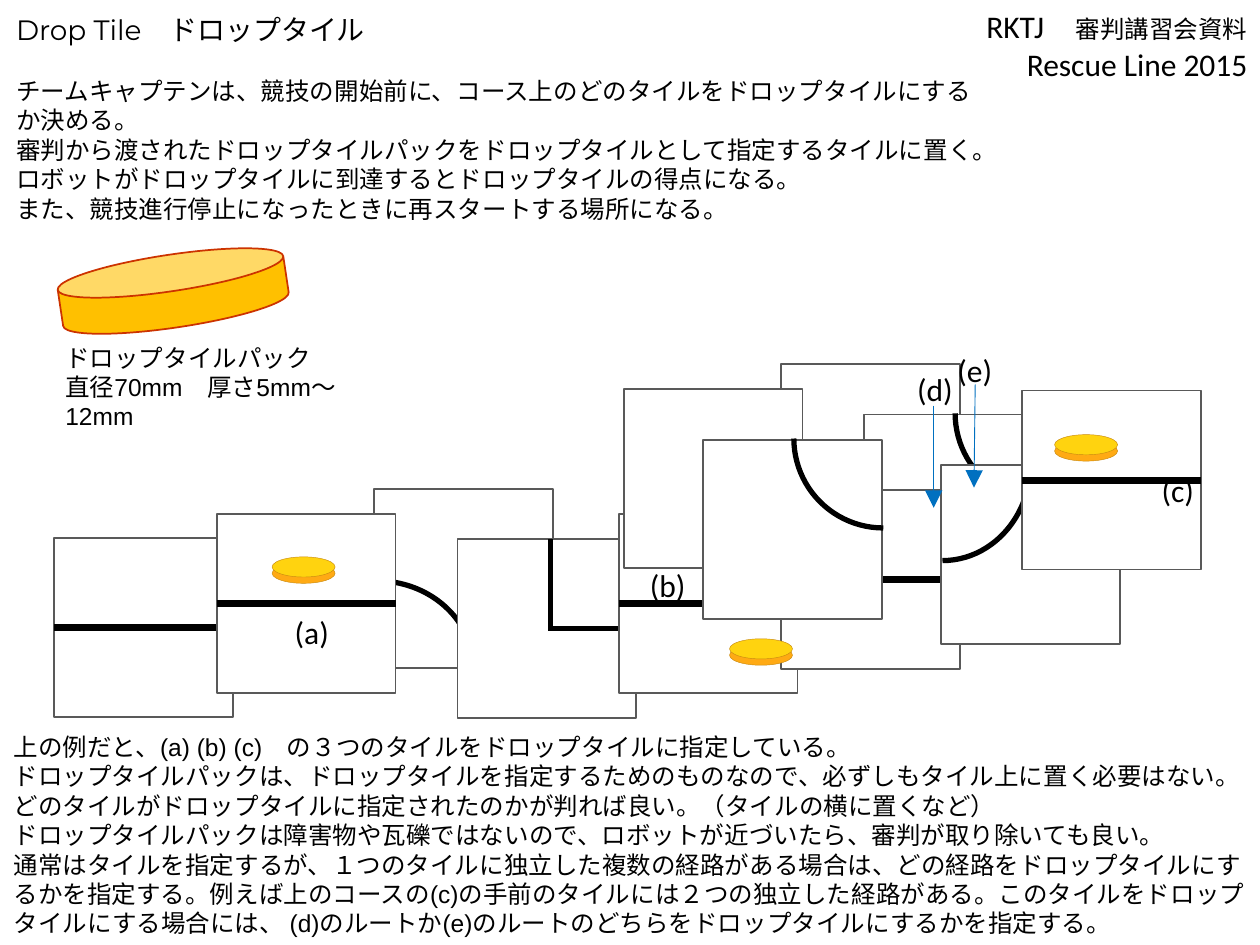
from lxml import etree
from pptx import Presentation
from pptx.dml.color import RGBColor
from pptx.enum.shapes import MSO_CONNECTOR, MSO_SHAPE
from pptx.enum.text import MSO_AUTO_SIZE, PP_ALIGN
from pptx.oxml.ns import qn
from pptx.util import Inches, Pt

RECT, ARC, CAN, OVAL = MSO_SHAPE.RECTANGLE, MSO_SHAPE.ARC, MSO_SHAPE.CAN, MSO_SHAPE.OVAL
STRAIGHT = MSO_CONNECTOR.STRAIGHT
LEFT, RIGHT = PP_ALIGN.LEFT, PP_ALIGN.RIGHT
FIT = MSO_AUTO_SIZE.SHAPE_TO_FIT_TEXT
C = {"black": "000000", "white": "FFFFFF", "edge": "595959", "arrow": "0070C0",
     "gold": "FFC000", "red": "CC3300", "puck_top": "FFD30F", "puck_side": "FFAA14",
     "puck_edge": "C88A10"}
TILE = 1.42

prs = Presentation()
prs.slide_width, prs.slide_height = Inches(10), Inches(7.5)
s = prs.slides.add_slide(prs.slide_layouts[6])


def add_shape(kind, x, y, w, h, fill, line, width, rot=0):
    sp = s.shapes.add_shape(kind, Inches(x), Inches(y), Inches(w), Inches(h))
    sp.shadow.inherit = False
    sp.rotation = rot
    if fill:
        sp.fill.solid()
        sp.fill.fore_color.rgb = RGBColor.from_string(C[fill])
    else:
        sp.fill.background()
    sp.line.color.rgb = RGBColor.from_string(C[line])
    sp.line.width = Pt(width)
    return sp


def add_line(x1, y1, x2, y2, color, width):
    ln = s.shapes.add_connector(STRAIGHT, Inches(x1), Inches(y1), Inches(x2), Inches(y2))
    ln.line.color.rgb = RGBColor.from_string(C[color])
    ln.line.width = Pt(width)
    etree.SubElement(ln._element.spPr, qn("a:effectLst"))
    return ln


# Course tiles from back to front: left, top, straight track?, arcs, extra lines
tiles = [
    (6.2, 2.89, False, [(5.44, 3.62, 1.54, 1.4, 0)], []),
    (6.86, 3.29, False, [(6.14, 4.01, TILE, TILE, 0), (7.58, 2.57, TILE, TILE, 180)], []),
    (0.43, 4.27, True, [], []),
    (2.97, 3.88, False, [(2.22, 4.61, 1.54, 1.4, 0)], []),
    (3.63, 4.28, False, [], [(4.37, 4.28, 4.37, 5.01), (5.05, 4.99, 4.37, 4.99)]),
    (1.72, 4.08, True, [], []),
    (4.91, 4.08, True, [], []),
    (6.2, 3.89, True, [], []),
    (4.95, 3.09, False, [], []),
    (7.47, 3.69, False, [(6.71, 2.98, 1.54, 1.4, 90)], []),
    (8.11, 3.1, True, [], []),
    (5.58, 3.49, False, [(6.3, 2.77, TILE, TILE, 180)], []),
]
for x, y, straight, arcs, lines in tiles:
    tile = add_shape(RECT, x, y, TILE, TILE, "white", "edge", 1)
    if straight:
        track = add_line(x, y + TILE / 2, x + TILE, y + TILE / 2, "black", 4)
        track.begin_connect(tile, 1)
        track.end_connect(tile, 3)
    for ax, ay, w, h, rot in arcs:
        add_shape(ARC, ax, ay, w, h, None, "black", 3, rot)
    for ends in lines:
        add_line(*ends, "black", 3)

# Drop tile packs: a large one and three lying on the course
pack = add_shape(CAN, 0.47, 2.02, 1.81, 0.58, "gold", "red", 1, 351.5)
pack.adjustments[0] = 0.5
for x, y in [(2.16, 4.42), (5.79, 5.07), (8.37, 3.45)]:
    add_shape(OVAL, x, y + 0.05, 0.5, 0.16, "puck_side", "puck_edge", 0.25)
    add_shape(OVAL, x, y, 0.5, 0.16, "puck_top", "puck_edge", 0.25)

# Route arrows
for ends in [(7.41, 3.22, 7.41, 4.03), (7.74, 3.05, 7.73, 3.87)]:
    arrow = add_line(*ends, "arrow", 0.5)
    etree.SubElement(arrow.line._get_or_add_ln(), qn("a:tailEnd"),
                     type="triangle", w="lg", len="lg")

# Text boxes: left, top, width, height, alignment, paragraphs of (text, size, font) runs
texts = [
    (6.69, 0.01, 3.31, 0.71, RIGHT, [
        [("RKTJ\u3000".replace("\u3000", "　"), 18, "Calibri"), ("審判講習会資料", 14, "Calibri")],
        [("Rescue Line 2015", 18, "Calibri")]]),
    (0.03, 0.05, 7.9, 1.75, LEFT, [
        [("Drop Tile　ドロップタイル", 16, "Montserrat")],
        [("チームキャプテンは、競技の開始前に、コース上のどのタイルをドロップタイルにするか決める。", 14, "Arial")],
        [("審判から渡されたドロップタイルパックをドロップタイルとして指定するタイルに置く。", 14, "Arial")],
        [("ロボットがドロップタイルに到達するとドロップタイルの得点になる。", 14, "Arial")],
        [("また、競技進行停止になったときに再スタートする場所になる。", 14, "Arial")]]),
    (0.42, 2.67, 2.62, 0.81, LEFT, [
        [("ドロップタイルパック", 14, "Arial")],
        [("直径70mm　厚さ5mm～12mm", 14, "Arial")]]),
    (0.01, 5.76, 9.99, 1.75, LEFT, [
        [("上の例だと、(a) (b) (c)　の３つのタイルをドロップタイルに指定している。", 14, "Arial")],
        [("ドロップタイルパックは、ドロップタイルを指定するためのものなので、必ずしもタイル上に置く必要はない。"
          "どのタイルがドロップタイルに指定されたのかが判れば良い。（タイルの横に置くなど）", 14, "Arial")],
        [("ドロップタイルパックは障害物や瓦礫ではないので、ロボットが近づいたら、審判が取り除いても良い。", 14, "Arial")],
        [("通常はタイルを指定するが、１つのタイルに独立した複数の経路がある場合は、"
          "どの経路をドロップタイルにするかを指定する。例えば上のコースの(c)の手前のタイルには"
          "２つの独立した経路がある。このタイルをドロップタイルにする場合には、 "
          "(d)のルートか(e)のルートのどちらをドロップタイルにするかを指定する。", 14, "Arial")]]),
]
labels = [("(a)", 2.24, 4.82), ("(b)", 5.06, 4.44), ("(c)", 9.12, 3.69),
          ("(d)", 7.18, 2.89), ("(e)", 7.5, 2.74)]
texts += [(x, y, 0.49, 0.4, LEFT, [[(label, 18, "Calibri")]]) for label, x, y in labels]

for x, y, w, h, align, paragraphs in texts:
    tf = s.shapes.add_textbox(Inches(x), Inches(y), Inches(w), Inches(h)).text_frame
    tf.word_wrap = True
    tf.auto_size = FIT
    for i, runs in enumerate(paragraphs):
        p = tf.paragraphs[0] if i == 0 else tf.add_paragraph()
        p.alignment = align
        if i == 1 and paragraphs[0][0][2] == "Montserrat":
            p.space_before = Pt(17)  # gap between the title and the body
        for text, size, font in runs:
            r = p.add_run()
            r.text = text
            r.font.size = Pt(size)
            r.font.name = font
            r.font.color.rgb = RGBColor.from_string(C["black"])

prs.save("out.pptx")
